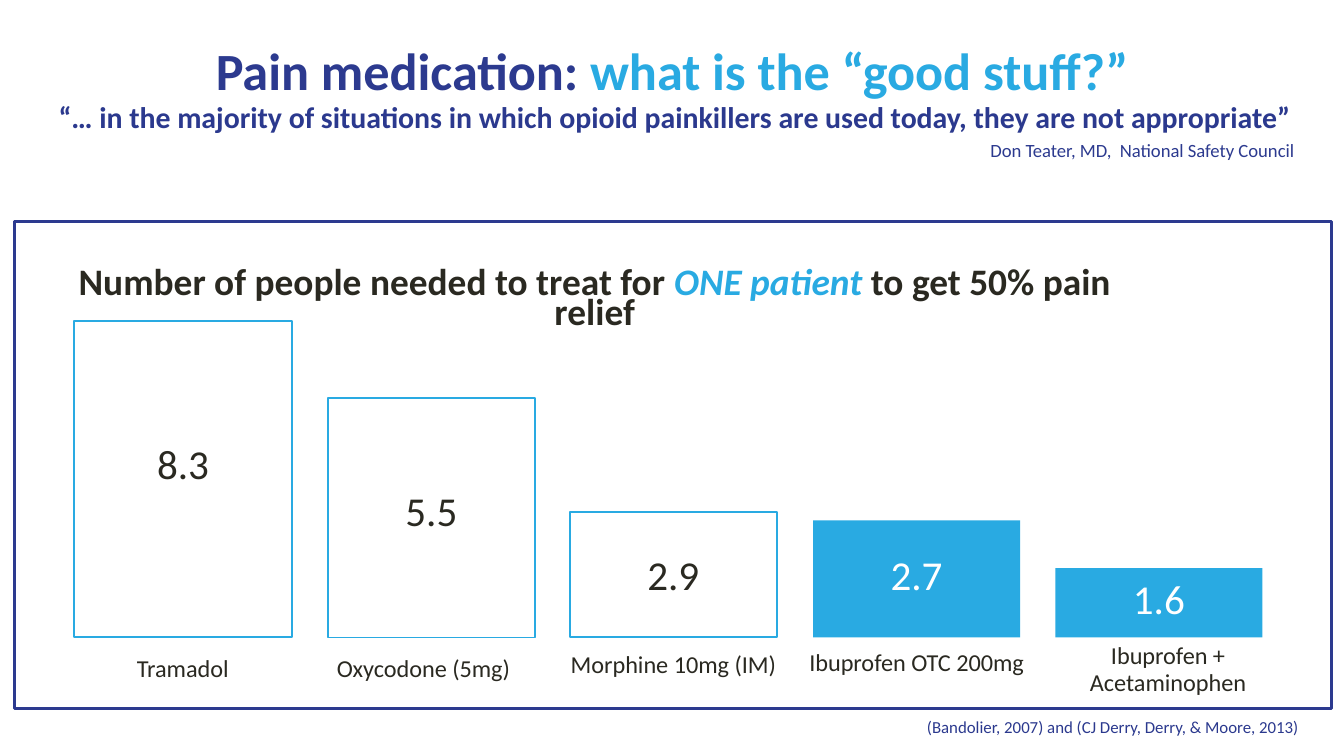
from collections import namedtuple

from pptx import Presentation
from pptx.dml.color import RGBColor
from pptx.enum.shapes import MSO_SHAPE
from pptx.enum.text import MSO_ANCHOR, MSO_AUTO_SIZE, PP_ALIGN
from pptx.util import Pt

RECTANGLE = MSO_SHAPE.RECTANGLE
CENTER, RIGHT = PP_ALIGN.CENTER, PP_ALIGN.RIGHT
TOP, NO_AUTOFIT = MSO_ANCHOR.TOP, MSO_AUTO_SIZE.NONE

NAVY = RGBColor(0x2C, 0x3A, 0x8F)
QUOTE_NAVY = RGBColor(0x2B, 0x39, 0x8E)
SKY = RGBColor(0x29, 0xAA, 0xE2)
INK = RGBColor(0x2A, 0x29, 0x21)
WHITE = RGBColor(0xFF, 0xFF, 0xFF)

FONT = "Calibri"
BASELINE = 341.5
VALUE_WIDTH = 31.7
LABEL_WIDTH = 131

Bar = namedtuple("Bar", "name value left top width value_top label_left label_top solid")
BARS = [
    Bar("Tramadol", "8.3", 39.6, 172.1, 116.9, 238.3, 32.4, 351.4, False),
    Bar("Oxycodone (5mg)", "5.5", 175.7, 213.3, 110.9, 263.7, 161.3, 351.4, False),
    Bar("Morphine 10mg (IM)", "2.9", 305.3, 274.2, 110.9, 297.6, 295.2, 349.2, False),
    Bar("Ibuprofen OTC 200mg", "2.7", 435.6, 278.8, 110.9, 298, 425.5, 348.6, True),
    Bar("Ibuprofen + Acetaminophen", "1.6", 565.4, 304.4, 110.9, 310.4, 560.2, 344.9, True),
]


def format_text(box, spans, size, leading, align=CENTER, bold=False):
    """Fill a box with one paragraph of (text, colour) spans; return the paragraph."""
    frame = box.text_frame
    frame.word_wrap = True
    frame.auto_size = NO_AUTOFIT
    frame.vertical_anchor = TOP
    frame.margin_left = frame.margin_right = 0
    frame.margin_top = frame.margin_bottom = 0
    para = frame.paragraphs[0]
    para.alignment = align
    para.line_spacing = Pt(leading)
    para.font.name, para.font.size, para.font.bold = FONT, Pt(size), bold
    for text, color in spans:
        span = para.add_run()
        span.text = text
        span.font.color.rgb = color
    return para


def add_text(page, left, top, width, height, spans, size, leading, **style):
    box = page.shapes.add_textbox(Pt(left), Pt(top), Pt(width), Pt(height))
    return format_text(box, spans, size, leading, **style)


def add_rectangle(page, left, top, width, height, color, line_width=None):
    """Draw an outline of the given width, or a solid block if there is none."""
    box = page.shapes.add_shape(RECTANGLE, Pt(left), Pt(top), Pt(width), Pt(height))
    box.shadow.inherit = False
    if line_width is None:
        box.fill.solid()
        box.fill.fore_color.rgb = color
        box.line.fill.background()
    else:
        box.fill.background()
        box.line.color.rgb = color
        box.line.width = Pt(line_width)


def add_title(page):
    title = page.shapes.title
    title.left, title.top, title.width, title.height = Pt(0), Pt(25.2), Pt(720), Pt(30.2)
    spans = [("Pain medication: ", NAVY), ("what is the “good stuff?”", SKY)]
    format_text(title, spans, 28, 29, bold=True)


def add_quote(page):
    quote = "“… in the majority of situations in which opioid painkillers are used today, they are not appropriate” "
    para = add_text(page, 25.2, 58.3, 670.3, 49, [(quote, QUOTE_NAVY)], 16, 14,
                    align=RIGHT, bold=True)
    para.add_line_break()
    speaker = para.add_run()
    speaker.text = "Don Teater, MD,  National Safety Council "
    speaker.font.size = Pt(10)
    speaker.font.bold = False
    speaker.font.color.rgb = NAVY


def add_heading(page):
    spans = [
        ("Number of people needed to treat for ", INK),
        ("ONE patient ", SKY),
        ("to get 50% pain relief", INK),
    ]
    para = add_text(page, 18.7, 146.2, 599.8, 18, spans, 20, 16, bold=True)
    para.runs[1].font.italic = True


def add_bar(page, bar):
    add_rectangle(page, bar.left, bar.top, bar.width, BASELINE - bar.top, SKY,
                  None if bar.solid else 1)
    value_left = bar.left + (bar.width - VALUE_WIDTH) / 2
    value_color = WHITE if bar.solid else INK
    add_text(page, value_left, bar.value_top, VALUE_WIDTH, 23.8,
             [(bar.value, value_color)], 22, 23)
    add_text(page, bar.label_left, bar.label_top, LABEL_WIDTH, 14.4,
             [(bar.name, INK)], 13, 14)


def main():
    deck = Presentation()
    deck.slide_width, deck.slide_height = Pt(720), Pt(405)
    page = deck.slides.add_slide(deck.slide_layouts.get_by_name("Title Only"))
    add_title(page)
    add_quote(page)
    add_rectangle(page, 7.9, 118.8, 705.6, 260.6, NAVY, 1.5)
    add_heading(page)
    for bar in BARS:
        add_bar(page, bar)
    citation = "(Bandolier, 2007) and (CJ Derry, Derry, & Moore, 2013)"
    add_text(page, -24.5, 385.9, 720, 10, [(citation, QUOTE_NAVY)], 9, 9, align=RIGHT)
    deck.save("out.pptx")


if __name__ == "__main__":
    main()
